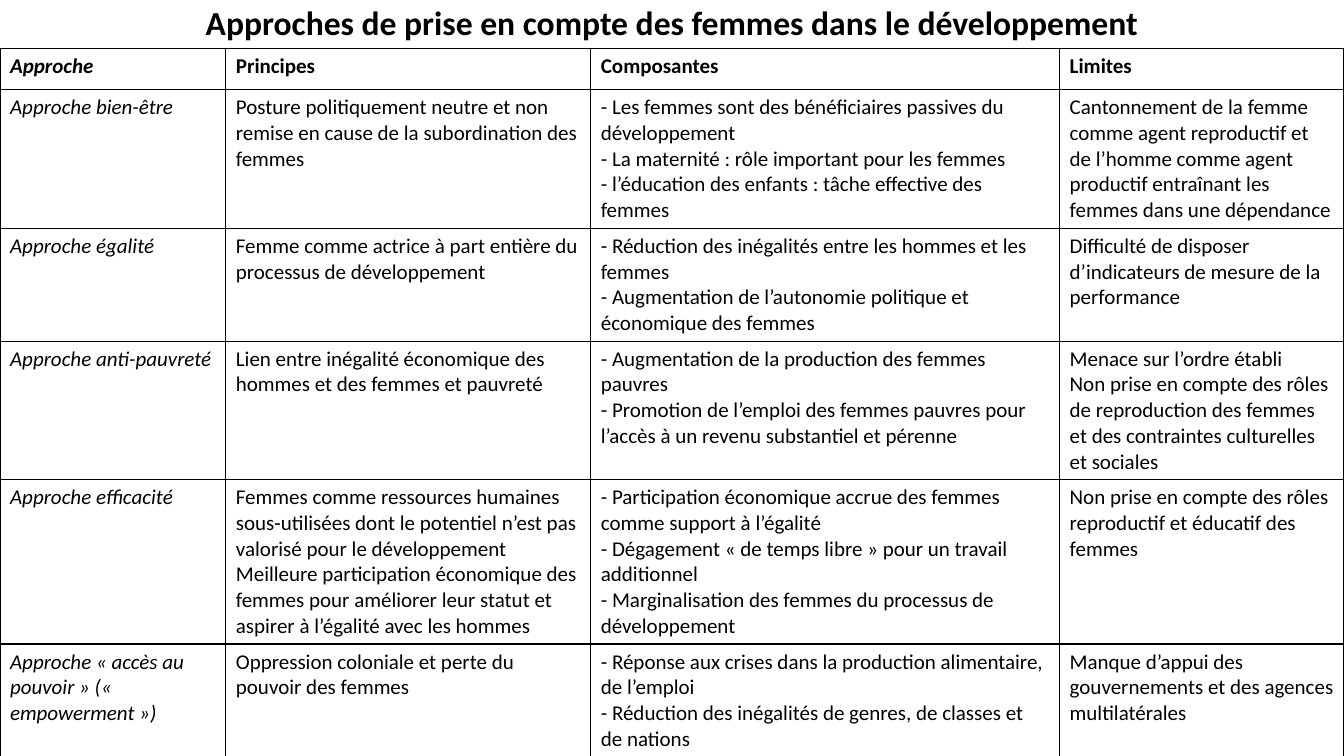
"""Build a slide with a table of approaches to women in development."""
import pptx
import pptx.dml.color
import pptx.enum.text
import pptx.oxml
import pptx.oxml.ns
import pptx.util

Inch = pptx.util.Inches
WIDE, HIGH, TOP = 13.33, 7.5, 0.48
COLS = [2.24, 3.62, 4.65, 2.82]
LINES = [5, 4, 5, 6, 4]
PAD, STEP = 0.1, 0.255
INK = "000000"

rows = [
    ["Approche", "Principes", "Composantes", "Limites"],
    ["Approche bien-être",
     "Posture politiquement neutre et non remise en cause de la subordination des femmes",
     "- Les femmes sont des bénéficiaires passives du développement\n"
     "- La maternité : rôle important pour les femmes\n"
     "- l’éducation des enfants : tâche effective des femmes",
     "Cantonnement de la femme comme agent reproductif et de l’homme comme agent "
     "productif entraînant les femmes dans une dépendance"],
    ["Approche égalité",
     "Femme comme actrice à part entière du processus de développement",
     "- Réduction des inégalités entre les hommes et les femmes\n"
     "- Augmentation de l’autonomie politique et économique des femmes",
     "Difficulté de disposer d’indicateurs de mesure de la performance"],
    ["Approche anti-pauvreté",
     "Lien entre inégalité économique des hommes et des femmes et pauvreté",
     "- Augmentation de la production des femmes pauvres\n"
     "- Promotion de l’emploi des femmes pauvres pour l’accès à un revenu "
     "substantiel et pérenne",
     "Menace sur l’ordre établi\n"
     "Non prise en compte des rôles de reproduction des femmes et des contraintes "
     "culturelles et sociales"],
    ["Approche efficacité",
     "Femmes comme ressources humaines sous-utilisées dont le potentiel n’est pas "
     "valorisé pour le développement\n"
     "Meilleure participation économique des femmes pour améliorer leur statut et "
     "aspirer à l’égalité avec les hommes",
     "- Participation économique accrue des femmes comme support à l’égalité\n"
     "- Dégagement « de temps libre » pour un travail additionnel\n"
     "- Marginalisation des femmes du processus de développement",
     "Non prise en compte des rôles reproductif et éducatif des femmes"],
    ["Approche « accès au pouvoir » (« empowerment »)",
     "Oppression coloniale et perte du pouvoir des femmes",
     "- Réponse aux crises dans la production alimentaire, de l’emploi\n"
     "- Réduction des inégalités de genres, de classes et de nations",
     "Manque d’appui des gouvernements et des agences multilatérales"],
]


def style(frame, size, bold=False, slant=False, color=INK):
    """Format every run of a text frame."""
    for para in frame.paragraphs:
        for run in para.runs:
            font = run.font
            font.name, font.size = "Calibri", pptx.util.Pt(size)
            font.bold, font.italic = bold, slant
            font.color.rgb = pptx.dml.color.RGBColor.from_string(color)


def edge(cell, color=INK):
    """Draw a one-point line on each side of a cell."""
    props = cell._tc.get_or_add_tcPr()
    for spot, side in enumerate(["lnL", "lnR", "lnT", "lnB"]):
        line = pptx.oxml.parse_xml(
            f'<a:{side} {pptx.oxml.ns.nsdecls("a")} w="12700"><a:solidFill>'
            f'<a:srgbClr val="{color}"/></a:solidFill></a:{side}>')
        props.insert(spot, line)


deck = pptx.Presentation()
deck.slide_width, deck.slide_height = Inch(WIDE), Inch(HIGH)
slide = deck.slides.add_slide(deck.slide_layouts[6])

title = slide.shapes.add_textbox(Inch(0.58), 0, Inch(12.17), Inch(TOP)).text_frame
title.word_wrap = True
title.vertical_anchor = pptx.enum.text.MSO_ANCHOR.MIDDLE
title.text = "Approches de prise en compte des femmes dans le développement"
title.paragraphs[0].alignment = pptx.enum.text.PP_ALIGN.CENTER
title.paragraphs[0].line_spacing = 0.9
style(title, 24, bold=True)

highs = [0.41] + [PAD + STEP * count for count in LINES]
table = slide.shapes.add_table(len(rows), len(COLS), 0, Inch(TOP),
                               Inch(WIDE), Inch(sum(highs))).table
table.first_row = table.horz_banding = False
for col, wide in zip(table.columns, COLS):
    col.width = Inch(wide)
for r, (row, high) in enumerate(zip(rows, highs)):
    table.rows[r].height = Inch(high)
    for c, text in enumerate(row):
        cell = table.cell(r, c)
        cell.text_frame.text = text
        style(cell.text_frame, 15, bold=r == 0, slant=c == 0)
        cell.fill.background()
        edge(cell)

deck.save("out.pptx")
